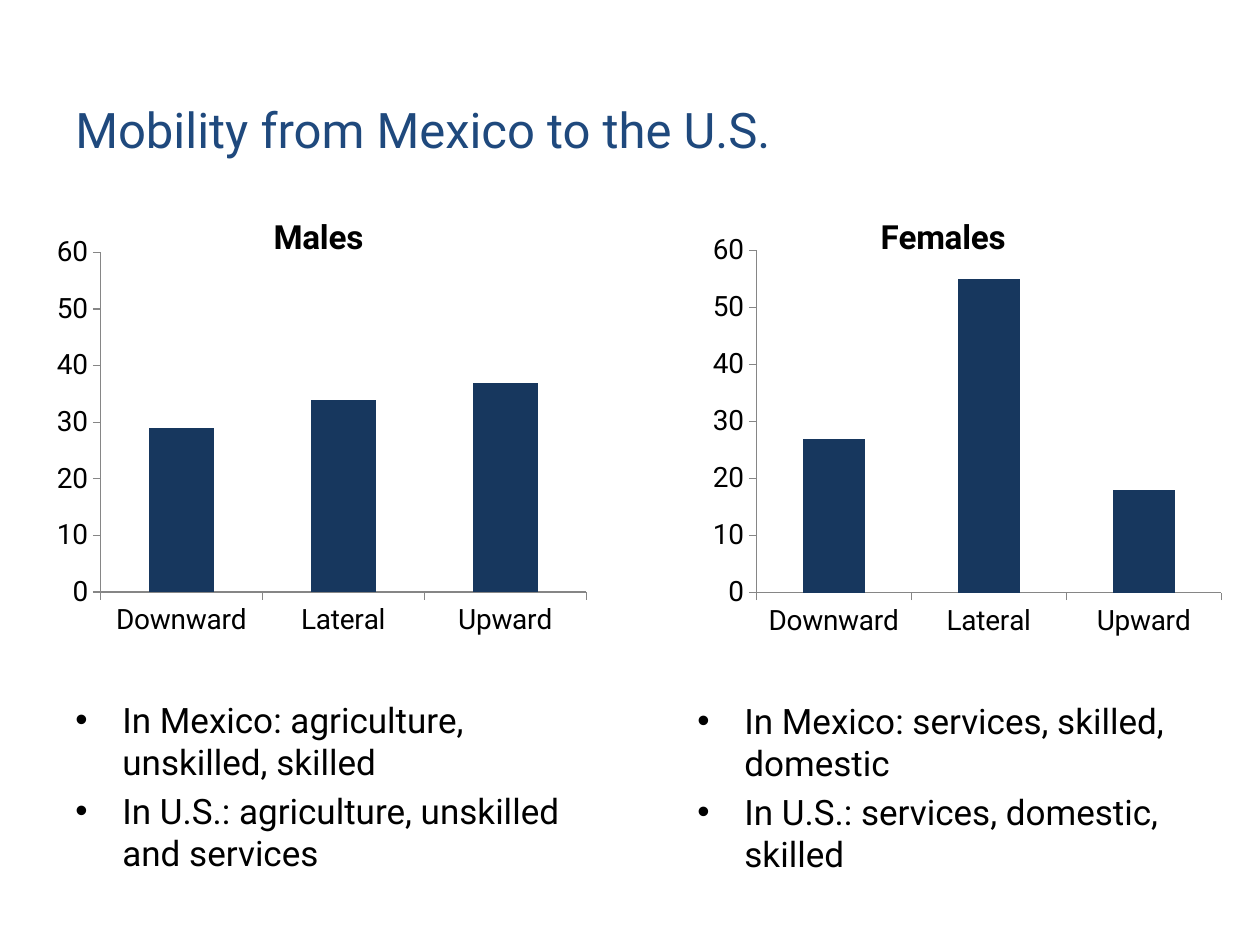
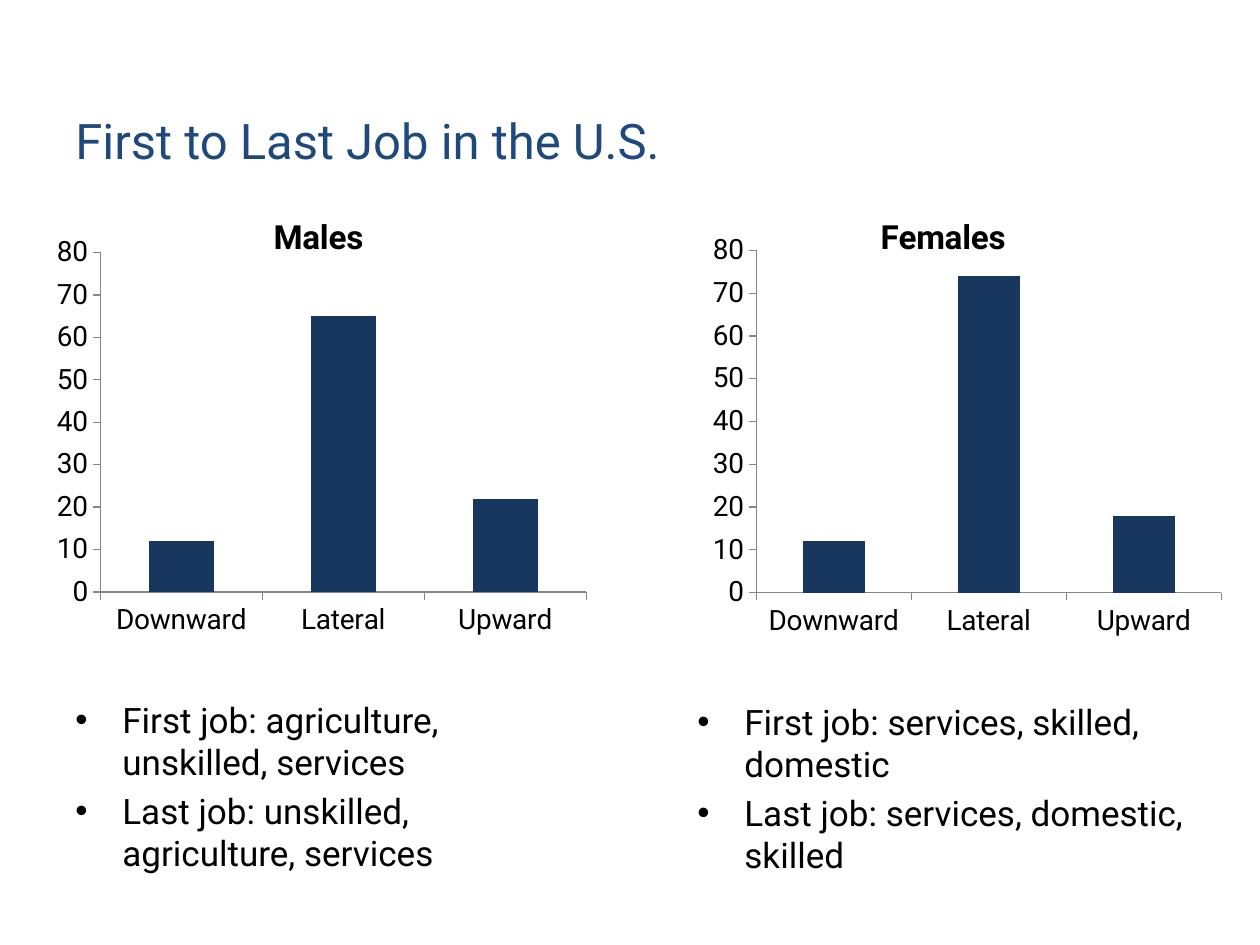
from lxml.etree import SubElement
from pptx import Presentation
from pptx.chart.data import CategoryChartData
from pptx.dml.color import RGBColor
from pptx.enum.chart import XL_CHART_TYPE, XL_TICK_MARK
from pptx.enum.text import MSO_ANCHOR
from pptx.oxml import parse_xml
from pptx.oxml.ns import nsdecls, qn
from pptx.util import Pt

EMU_PER_PX = 914400 / 126
FONT = "Roboto"
COLORS = {"title": "1F497D", "text": "000000", "bar": "17375E", "axis": "868686"}
DIRECTIONS = ["Downward", "Lateral", "Upward"]
CHART_BOXES = {"Males": (30, 193, 577, 491), "Females": (665, 193, 557, 467)}
PLOT_AREAS = {"Males": (0.122, 0.121, 0.842, 0.692), "Females": (0.164, 0.123, 0.836, 0.733)}
NOTE_LEFTS = {"Males": 63, "Females": 685}

MOBILITY_SLIDES = [
    {
        "title": "Mobility from Mexico to the U.S.", "title_top": 58, "axis_max": 60,
        "Males": ([29, 34, 37], 696,
                  ["In Mexico: agriculture, unskilled, skilled",
                   "In U.S.: agriculture, unskilled and services"]),
        "Females": ([27, 55, 18], 697,
                    ["In Mexico: services, skilled, domestic",
                     "In U.S.: services, domestic, skilled"]),
    },
    {
        "title": "First to Last Job in the U.S.", "title_top": 69, "axis_max": 80,
        "Males": ([12, 65, 22], 696,
                  ["First job: agriculture, unskilled, services",
                   "Last job: unskilled, agriculture, services"]),
        "Females": ([12, 74, 18], 698,
                    ["First job: services, skilled, domestic",
                     "Last job: services, domestic, skilled"]),
    },
]


def px(*lengths):
    return [round(length * EMU_PER_PX) for length in lengths]


def set_font(font, size, color, bold=False):
    font.name = FONT
    font.size = Pt(size)
    font.bold = bold
    font.color.rgb = RGBColor.from_string(COLORS[color])


prs = Presentation()
prs.slide_width, prs.slide_height = px(1260, 945)

for content in MOBILITY_SLIDES:
    slide = prs.slides.add_slide(prs.slide_layouts[6])

    heading = slide.shapes.add_textbox(*px(63, content["title_top"], 1134, 141)).text_frame
    heading.word_wrap = True
    heading.vertical_anchor = MSO_ANCHOR.MIDDLE
    heading.text = content["title"]
    set_font(heading.paragraphs[0].font, 28, "title")

    for group, box in CHART_BOXES.items():
        shares, notes_top, notes = content[group]

        data = CategoryChartData()
        data.categories = DIRECTIONS
        data.add_series(group, shares)
        chart = slide.shapes.add_chart(XL_CHART_TYPE.COLUMN_CLUSTERED, *px(*box), data).chart
        chart.has_legend = False
        set_font(chart.font, 16, "text")
        chart.has_title = True
        chart.chart_title.text_frame.text = group
        set_font(chart.chart_title.text_frame.paragraphs[0].font, 19, "text", bold=True)

        columns = chart.plots[0]
        columns.gap_width = 150
        columns.vary_by_categories = False
        fill = columns.series[0].format.fill
        fill.solid()
        fill.fore_color.rgb = RGBColor.from_string(COLORS["bar"])

        for axis in (chart.category_axis, chart.value_axis):
            axis.has_major_gridlines = False
            axis.major_tick_mark = XL_TICK_MARK.OUTSIDE
            axis.minor_tick_mark = XL_TICK_MARK.NONE
            axis.format.line.width = Pt(0.75)
            axis.format.line.color.rgb = RGBColor.from_string(COLORS["axis"])
        chart.value_axis.minimum_scale = 0
        chart.value_axis.maximum_scale = content["axis_max"]
        chart.value_axis.major_unit = 10

        plot_area = chart.element.find(".//" + qn("c:plotArea"))
        for automatic_layout in plot_area.findall(qn("c:layout")):
            plot_area.remove(automatic_layout)
        layout = parse_xml(f"<c:layout {nsdecls('c')}><c:manualLayout/></c:layout>")
        settings = [("layoutTarget", "inner"), ("xMode", "edge"), ("yMode", "edge")]
        settings += zip("xywh", PLOT_AREAS[group])
        for tag, value in settings:
            SubElement(layout[0], qn(f"c:{tag}")).set("val", str(value))
        plot_area.insert(0, layout)

        frame = slide.shapes.add_textbox(*px(NOTE_LEFTS[group], notes_top, 524, 184)).text_frame
        frame.word_wrap = True
        frame.vertical_anchor = MSO_ANCHOR.BOTTOM
        for index, note in enumerate(notes):
            paragraph = frame.add_paragraph() if index else frame.paragraphs[0]
            paragraph.text = note
            properties = paragraph._p.get_or_add_pPr()
            indent = px(47)[0]
            properties.set("marL", str(indent))
            properties.set("indent", str(-indent))
            SubElement(properties, qn("a:buFont")).set("typeface", "Arial")
            SubElement(properties, qn("a:buChar")).set("char", "•")
            if index:
                paragraph.space_before = Pt(4)
            set_font(paragraph.font, 20, "text")

prs.save("out.pptx")
